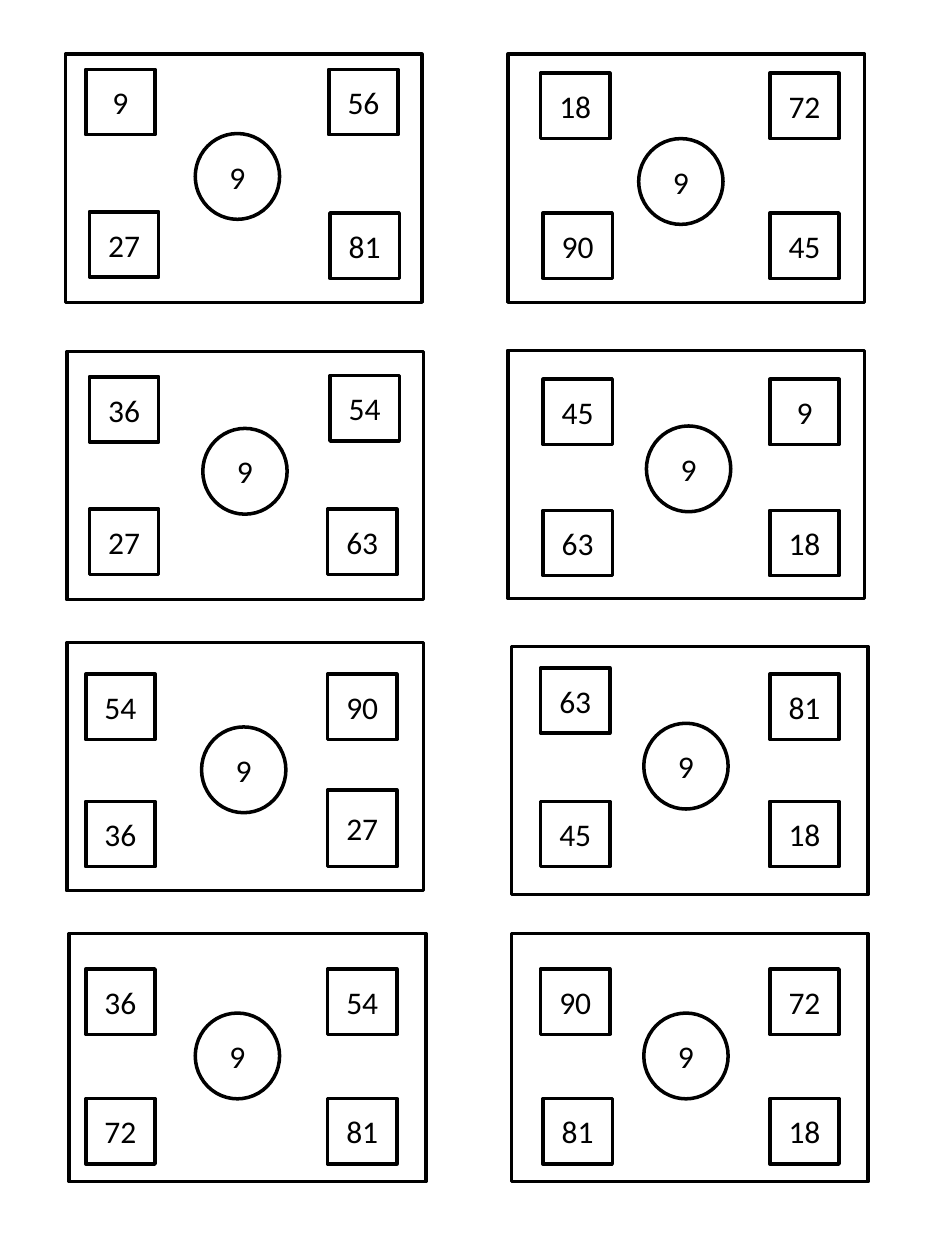
from pptx import Presentation
from pptx import util as u
from pptx.dml.color import RGBColor
from pptx.enum import shapes, text

BLACK = RGBColor(0x00, 0x00, 0x00)
WHITE = RGBColor(0xFF, 0xFF, 0xFF)

CARD = (203.8, 141.8)
TILE = (39.6, 37.4)
TALL_TILE = (39.6, 43.9)
CIRCLE = (48.2, 49)
FACTOR = 9

# Each card: corner, circle corner, then its tiles as (number, x, y[, size])
CARDS = [
    ((37.4, 31), (111.6, 76.3),
     [(9, 49, 39.6), (56, 187.9, 39.6), (27, 51.1, 121), (81, 188.6, 121.7)]),
    ((290.2, 31), (365, 79.2),
     [(18, 308.9, 41.8), (72, 439.9, 41.8), (90, 310.3, 121.7), (45, 439.9, 121.7)]),
    ((38.2, 200.9), (115.9, 244.8),
     [(36, 51.1, 215.3), (54, 188.6, 214.6), (27, 51.1, 290.9), (63, 187.2, 290.9)]),
    ((290.2, 200.2), (369.4, 243.4),
     [(45, 310.3, 216.7), (9, 439.9, 216.7), (63, 310.3, 291.6), (18, 439.9, 291.6)]),
    ((38.2, 367.2), (115.2, 415.4),
     [(54, 49, 385.2), (90, 187.2, 385.2), (36, 49, 457.9),
      (27, 187.2, 451.4, TALL_TILE)]),
    ((292.3, 369.4), (367.9, 413.3),
     [(63, 308.9, 381.6), (81, 439.9, 385.2), (45, 308.9, 457.9), (18, 439.9, 457.9)]),
    ((39.6, 533.5), (111.6, 578.9),
     [(36, 49, 553.7), (54, 187.2, 553.7), (72, 49, 627.8), (81, 187.2, 627.8)]),
    ((292.3, 533.5), (367.9, 578.9),
     [(90, 308.9, 553.7), (72, 439.9, 553.7), (81, 310.3, 627.8), (18, 439.9, 627.8)]),
]


def write(tf, content, *, size=18, font="Calibri", color=BLACK,
          align=text.PP_ALIGN.CENTER, anchor=text.MSO_ANCHOR.MIDDLE):
    tf.word_wrap = True
    tf.vertical_anchor = anchor
    p = tf.paragraphs[0]
    p.alignment = align
    r = p.add_run()
    r.text = str(content)
    r.font.size = u.Pt(size)
    r.font.name = font
    r.font.color.rgb = color


class Sheet:
    """Holds the style and the current slide."""

    fill, line, line_width = WHITE, BLACK, 2

    def __init__(self, s):
        self.s = s

    def outline(self, kind, x, y, size):
        sp = self.s.shapes.add_shape(kind, *(u.Pt(v) for v in (x, y, *size)))
        sp.shadow.inherit = False
        sp.fill.solid()
        sp.fill.fore_color.rgb = self.fill
        sp.line.color.rgb = self.line
        sp.line.width = u.Pt(self.line_width)
        return sp

    def card(self, x, y):
        self.outline(shapes.MSO_SHAPE.RECTANGLE, x, y, CARD)

    def tile(self, number, x, y, size=TILE):
        sp = self.outline(shapes.MSO_SHAPE.RECTANGLE, x, y, size)
        write(sp.text_frame, number)

    def circle(self, number, x, y):
        sp = self.outline(shapes.MSO_SHAPE.OVAL, x, y, CIRCLE)
        write(sp.text_frame, number)


def main():
    prs = Presentation()
    prs.slide_width, prs.slide_height = u.Pt(540), u.Pt(720)
    sheet = Sheet(prs.slides.add_slide(prs.slide_layouts[6]))

    # Card frames lie behind everything else
    for corner, _, _ in CARDS:
        sheet.card(*corner)

    # Number tiles
    for _, _, tiles in CARDS:
        for tile in tiles:
            sheet.tile(*tile)

    # Centre circles
    for _, corner, _ in CARDS:
        sheet.circle(FACTOR, *corner)

    prs.save("out.pptx")


if __name__ == "__main__":
    main()
